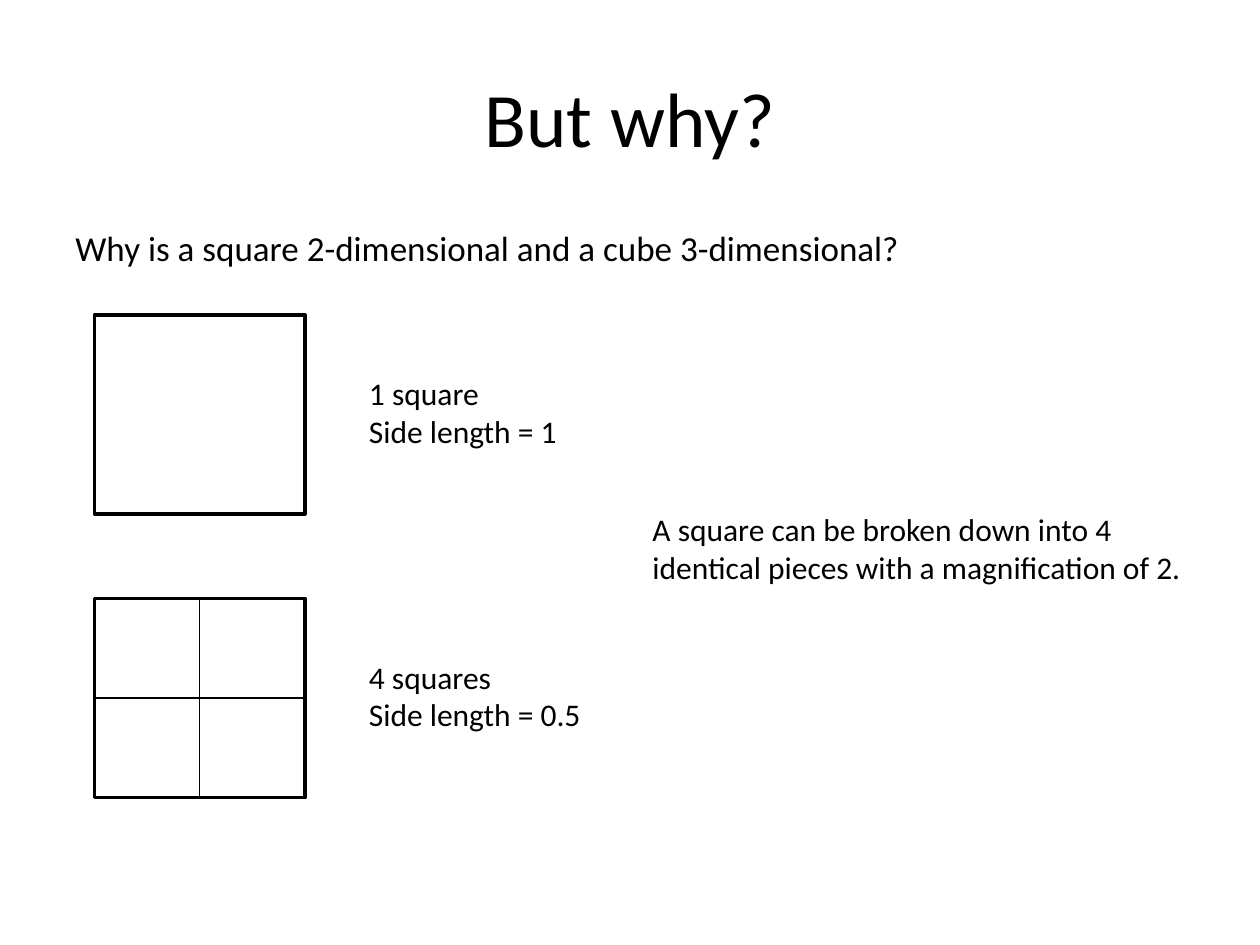
import pptx
import pptx.dml.color
import pptx.enum.shapes
import pptx.enum.text
import pptx.oxml
import pptx.util
from pptx.util import Inches

BLACK = "000000"
WHITE = "FFFFFF"
FONT = "Calibri"
SQUARE_WIDTH, SQUARE_HEIGHT = 1.67, 1.58


def color(hex_string):
    """Turn a hex string into a colour."""
    return pptx.dml.color.RGBColor.from_string(hex_string)


def add_text(slide, box, lines, size, wrap=True, align="LEFT", anchor="TOP"):
    """Place a text box with one paragraph for each line."""
    shape = slide.shapes.add_textbox(*map(Inches, box))
    frame = shape.text_frame
    frame.word_wrap = wrap
    frame.vertical_anchor = pptx.enum.text.MSO_ANCHOR[anchor]
    frame.text = "\n".join(lines)
    for paragraph in frame.paragraphs:
        paragraph.alignment = pptx.enum.text.PP_ALIGN[align]
        paragraph.font.name = FONT
        paragraph.font.size = pptx.util.Pt(size)
        paragraph.font.color.rgb = color(BLACK)


def add_divider(slide, start, end):
    """Draw a thin line between two points."""
    connector = slide.shapes.add_connector(
        pptx.enum.shapes.MSO_CONNECTOR.STRAIGHT, *map(Inches, start + end)
    )
    connector.line.width = pptx.util.Pt(0.75)
    connector.line.color.rgb = color(BLACK)
    properties = connector._element.spPr
    properties.append(pptx.oxml.parse_xml(
        '<a:effectLst xmlns:a="http://schemas.openxmlformats.org/drawingml/2006/main"/>'
    ))


def add_square(slide, box, pieces, caption, caption_width):
    """Draw a square cut into pieces per side, with its caption on the right."""
    left, top, width, height = box
    shape = slide.shapes.add_shape(
        pptx.enum.shapes.MSO_SHAPE.RECTANGLE, *map(Inches, box)
    )
    shape.shadow.inherit = False
    shape.fill.solid()
    shape.fill.fore_color.rgb = color(WHITE)
    shape.line.color.rgb = color(BLACK)
    shape.line.width = pptx.util.Pt(2)
    for index in range(1, pieces):
        x = left + width * index / pieces
        y = top + height * index / pieces
        add_divider(slide, (left, y), (left + width, y))
        add_divider(slide, (x, top), (x, top + height))
    caption_box = (left + 2.08, top + 0.42, caption_width, 0.71)
    add_text(slide, caption_box, caption, 18, wrap=False)


def main():
    """Build the slide and save it."""
    presentation = pptx.Presentation()
    presentation.slide_width = Inches(10)
    presentation.slide_height = Inches(7.5)
    slide = presentation.slides.add_slide(presentation.slide_layouts[6])
    add_text(slide, (0.5, 0.3, 9, 1.25), ["But why?"], 44,
             align="CENTER", anchor="MIDDLE")
    add_text(slide, (0.5, 1.75, 9, 0.5),
             ["Why is a square 2-dimensional and a cube 3-dimensional?"], 20)
    add_square(slide, (0.75, 2.5, SQUARE_WIDTH, SQUARE_HEIGHT), 1,
               ["1 square", "Side length = 1"], 1.71)
    add_square(slide, (0.75, 4.75, SQUARE_WIDTH, SQUARE_HEIGHT), 2,
               ["4 squares", "Side length = 0.5"], 1.9)
    add_text(slide, (5.08, 4, 4.58, 0.71),
             ["A square can be broken down into 4 identical pieces "
              "with a magnification of 2."], 18)
    presentation.save("out.pptx")


if __name__ == "__main__":
    main()
